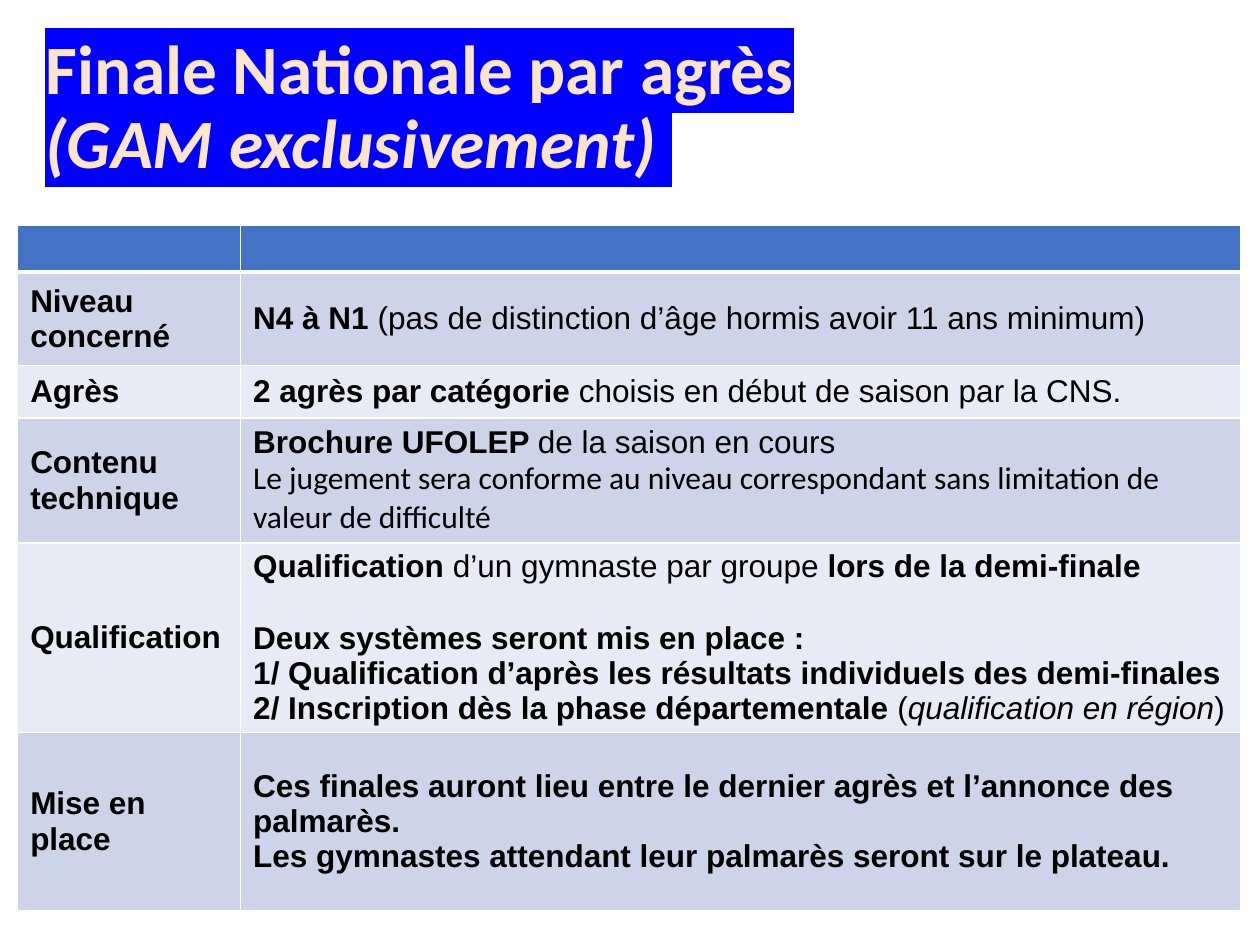
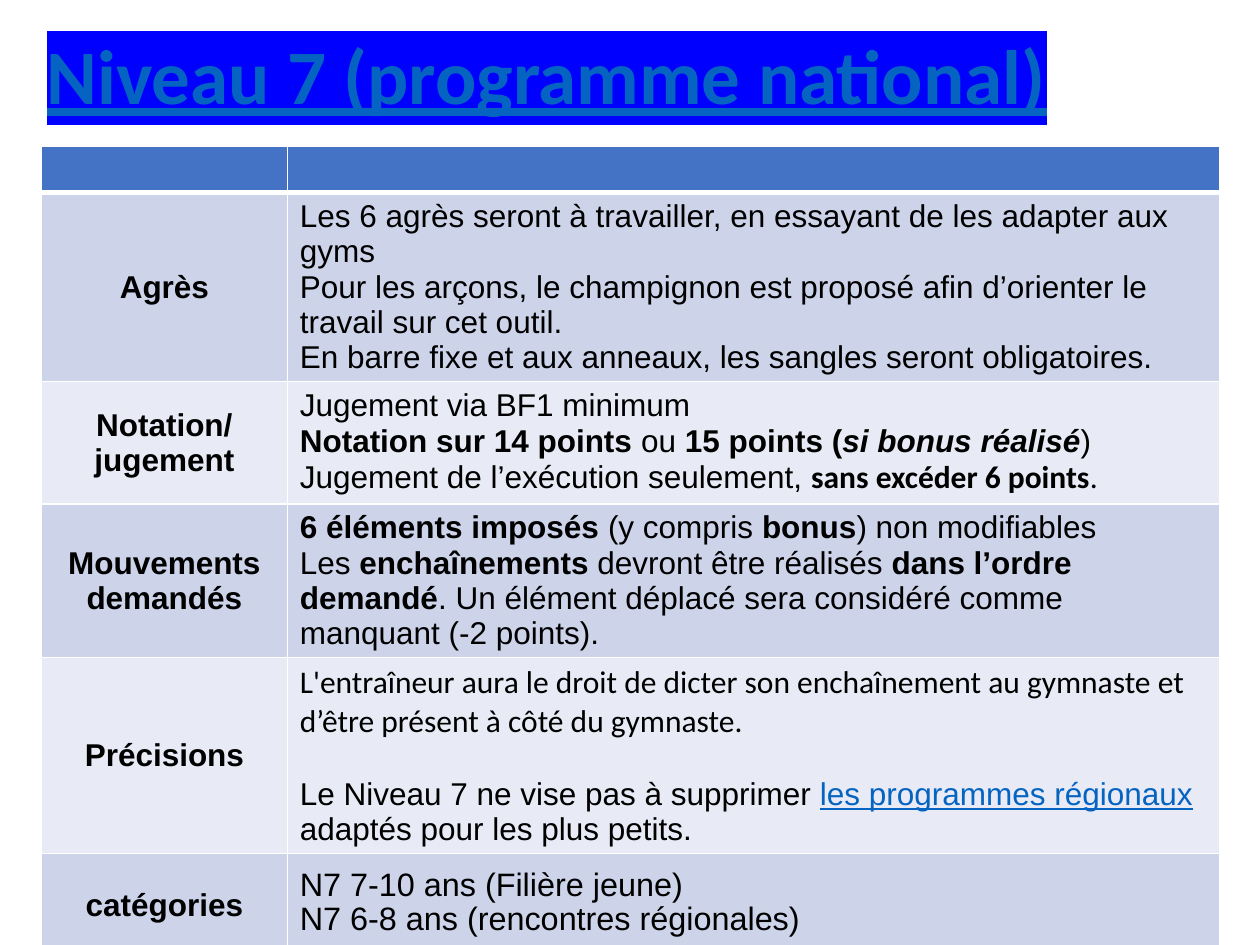
"""Build two slides of gymnastics rules, each a highlighted title over a two-column table."""
import pptx
import pptx.dml.color
import pptx.enum.text
import pptx.oxml
import pptx.oxml.ns
import pptx.util

Inches, Pt = pptx.util.Inches, pptx.util.Pt
ALIGN, ANCHOR = pptx.enum.text.PP_ALIGN, pptx.enum.text.MSO_ANCHOR

WHITE, BLACK, LINK, CREAM = "FFFFFF", "000000", "0563C1", "FCE5CD"
HEADER, BANDS, HIGHLIGHT = "4472C4", ("CDD4EA", "E8EBF5"), "0000FF"

BASE = {"name": "Arial", "size": Pt(18), "bold": False, "italic": False, "underline": False}
STYLES = {
    "plain": {},
    "bold": {"bold": True},
    "italic": {"italic": True},
    "bold italic": {"bold": True, "italic": True},
    "calibri": {"name": "Calibri"},
    "calibri bold": {"name": "Calibri", "bold": True},
    "link": {"underline": True},
    "category": {"size": Pt(18.5)},
}
TITLE = {"name": "Calibri", "bold": True}
GAP = {"space_before": Pt(20.5)}
TIGHT = {"line_spacing": 0.7}

SLIDES = [
    {
        "title": [
            ("Finale Nationale par agrès\v", {"size": Pt(39.6)}),
            ("(GAM exclusivement) ", {"size": Pt(39.6), "italic": True}),
        ],
        "title_colour": CREAM,
        "title_box": (0.26, 0.28, 8.76, 1.17),
        "title_anchor": ANCHOR.MIDDLE,
        "table_corner": (0.14, 1.79),
        "columns": (1.77, 7.94),
        "heights": (0.37, 0.74, 0.42, 0.99, 1.5, 1.41),
        "label_align": ALIGN.LEFT,
        "rows": [
            ("Niveau concerné", [
                ([("N4 à N1 ", "bold"),
                  ("(pas de distinction d’âge hormis avoir 11 ans minimum)", "plain")], {}),
            ]),
            ("Agrès", [
                ([("2 agrès par catégorie ", "bold"),
                  ("choisis en début de saison par la CNS.", "plain")], {}),
            ]),
            ("Contenu technique", [
                ([("Brochure UFOLEP ", "bold"), ("de la saison en cours", "plain")], {}),
                ([("Le jugement sera conforme au niveau correspondant sans limitation "
                   "de valeur de difficulté", "calibri")], {}),
            ]),
            ("Qualification", [
                ([("Qualification", "bold"), (" d’un gymnaste par groupe ", "plain"),
                  ("lors de la demi-finale", "bold")], {}),
                ([("Deux systèmes seront mis en place :", "bold")], GAP),
                ([("1/ Qualification d’après les résultats individuels des demi-finales",
                   "bold")], {}),
                ([("2/ Inscription dès la phase départementale ", "bold"), ("(", "plain"),
                  ("qualification en région", "italic"), (")", "plain")], {}),
            ]),
            ("Mise en place", [
                ([("Ces finales auront lieu entre le dernier agrès et l’annonce des palmarès.",
                   "bold")], {}),
                ([("Les gymnastes attendant leur palmarès seront sur le plateau.", "bold")], {}),
            ]),
        ],
    },
    {
        "title": [("Niveau 7 (programme national)", {"size": Pt(44), "underline": True})],
        "title_colour": LINK,
        "title_box": (0.27, 0.25, 8.62, 0.9),
        "title_anchor": ANCHOR.TOP,
        "table_corner": (0.33, 1.16),
        "columns": (1.95, 7.4),
        "heights": (0.37, 1.5, 0.97, 1.22, 1.55, 0.83),
        "label_align": ALIGN.CENTER,
        "rows": [
            ("Agrès", [
                ([("Les 6 agrès seront à travailler, en essayant de les adapter aux gyms",
                   "plain")], {}),
                ([("Pour les arçons, le champignon est proposé afin d’orienter le travail "
                   "sur cet outil.", "plain")], {}),
                ([("En barre fixe et aux anneaux, les sangles seront obligatoires.",
                   "plain")], {}),
            ]),
            ("Notation/ jugement", [
                ([("Jugement via BF1 minimum", "plain")], {}),
                ([("Notation sur 14 points", "bold"), (" ou ", "plain"),
                  ("15 points (", "bold"), ("si bonus réalisé", "bold italic"),
                  (")", "plain")], {}),
                ([("Jugement de l’exécution seulement, ", "plain"),
                  ("sans excéder 6 points", "calibri bold"), (".", "calibri")], {}),
            ]),
            ("Mouvements demandés", [
                ([("6 éléments imposés ", "bold"), ("(y compris ", "plain"),
                  ("bonus", "bold"), (") non modifiables", "plain")], {}),
                ([("Les ", "plain"), ("enchaînements", "bold"),
                  (" devront être réalisés ", "plain"), ("dans l’ordre demandé", "bold"),
                  (". Un élément déplacé sera considéré comme manquant (-2 points).",
                   "plain")], {}),
            ]),
            ("Précisions", [
                ([("L'entraîneur aura le droit de dicter son enchaînement au gymnaste et "
                   "d’être présent à côté du gymnaste.", "calibri")], {}),
                ([("Le Niveau 7 ne vise pas à supprimer ", "plain"),
                  ("les programmes régionaux", "link"),
                  (" adaptés pour les plus petits.", "plain")], GAP),
            ]),
            ("catégories", [
                ([("N7 7-10 ans (Filière jeune)", "category")], TIGHT),
                ([("N7 6-8 ans (rencontres régionales)", "category")],
                 {**TIGHT, "space_before": Pt(5)}),
            ]),
        ],
    },
]


def rgb(colour):
    """Turn a hex string into a colour."""
    return pptx.dml.color.RGBColor.from_string(colour)


def apply(target, values):
    """Set each named attribute on the target."""
    for attribute, value in values.items():
        setattr(target, attribute, value)


def add_run(paragraph, wording, values, colour):
    """Add formatted wording to a paragraph."""
    run = paragraph.add_run()
    run.text = wording
    apply(run.font, {**BASE, **values})
    run.font.color.rgb = rgb(colour)
    return run


def colour_xml(tag, colour):
    """Make an element that holds one colour."""
    return pptx.oxml.parse_xml(
        f'<a:{tag} {pptx.oxml.ns.nsdecls("a")}><a:srgbClr val="{colour}"/></a:{tag}>')


def write_title(slide, content):
    """Place and fill the highlighted title."""
    title = slide.shapes.title
    apply(title, dict(zip(("left", "top", "width", "height"),
                          map(Inches, content["title_box"]))))
    apply(title.text_frame, {
        "word_wrap": True, "vertical_anchor": content["title_anchor"],
        "auto_size": pptx.enum.text.MSO_AUTO_SIZE.NONE})
    paragraph = title.text_frame.paragraphs[0]
    apply(paragraph, {"alignment": ALIGN.LEFT, "line_spacing": 0.9})
    for wording, values in content["title"]:
        lines = wording.split("\v")
        run = add_run(paragraph, lines[0], {**TITLE, **values}, content["title_colour"])
        fill = run.font._element.find(pptx.oxml.ns.qn("a:solidFill"))
        fill.addnext(colour_xml("highlight", HIGHLIGHT))
        if len(lines) > 1:
            paragraph.add_line_break()


def style_cell(cell, row):
    """Draw the white borders and the band of a cell."""
    properties = cell._tc.get_or_add_tcPr()
    widths = {"lnL": 1, "lnR": 1, "lnT": 3 if row == 1 else 1, "lnB": 3 if row == 0 else 1}
    for side, width in widths.items():
        border = pptx.oxml.parse_xml(
            f'<a:{side} {pptx.oxml.ns.nsdecls("a")} w="{Pt(width)}"/>')
        border.append(colour_xml("solidFill", WHITE))
        properties.append(border)
    cell.fill.solid()
    cell.fill.fore_color.rgb = rgb(HEADER if row == 0 else BANDS[(row - 1) % 2])
    cell.vertical_anchor = ANCHOR.MIDDLE


def write_cell(cell, paragraphs):
    """Write styled paragraphs into a cell."""
    for index, (runs, values) in enumerate(paragraphs):
        frame = cell.text_frame
        paragraph = frame.add_paragraph() if index else frame.paragraphs[0]
        apply(paragraph, values)
        for wording, style in runs:
            add_run(paragraph, wording, STYLES[style], LINK if style == "link" else BLACK)


def add_rules(slide, content):
    """Add the table of rules."""
    columns, heights = content["columns"], content["heights"]
    rules = slide.shapes.add_table(
        len(heights), len(columns), *map(Inches, content["table_corner"]),
        Inches(sum(columns)), Inches(sum(heights))).table
    rules.horz_banding = False
    for column, width in zip(rules.columns, columns):
        column.width = Inches(width)
    for index, height in enumerate(heights):
        rules.rows[index].height = Inches(height)
        for cell in rules.rows[index].cells:
            style_cell(cell, index)
    for cell in rules.rows[0].cells:
        cell.text_frame.paragraphs[0]._p.append(pptx.oxml.parse_xml(
            f'<a:endParaRPr {pptx.oxml.ns.nsdecls("a")} sz="1200"/>'))
    for index, (label, details) in enumerate(content["rows"], start=1):
        heading = [([(label, "bold")], {"alignment": content["label_align"]})]
        write_cell(rules.cell(index, 0), heading)
        write_cell(rules.cell(index, 1), details)


def main():
    """Build and save the slides."""
    deck = pptx.Presentation()
    apply(deck, {"slide_width": Inches(10), "slide_height": Inches(7.5)})
    for content in SLIDES:
        slide = deck.slides.add_slide(deck.slide_layouts[5])
        write_title(slide, content)
        add_rules(slide, content)
    deck.save("out.pptx")


if __name__ == "__main__":
    main()
